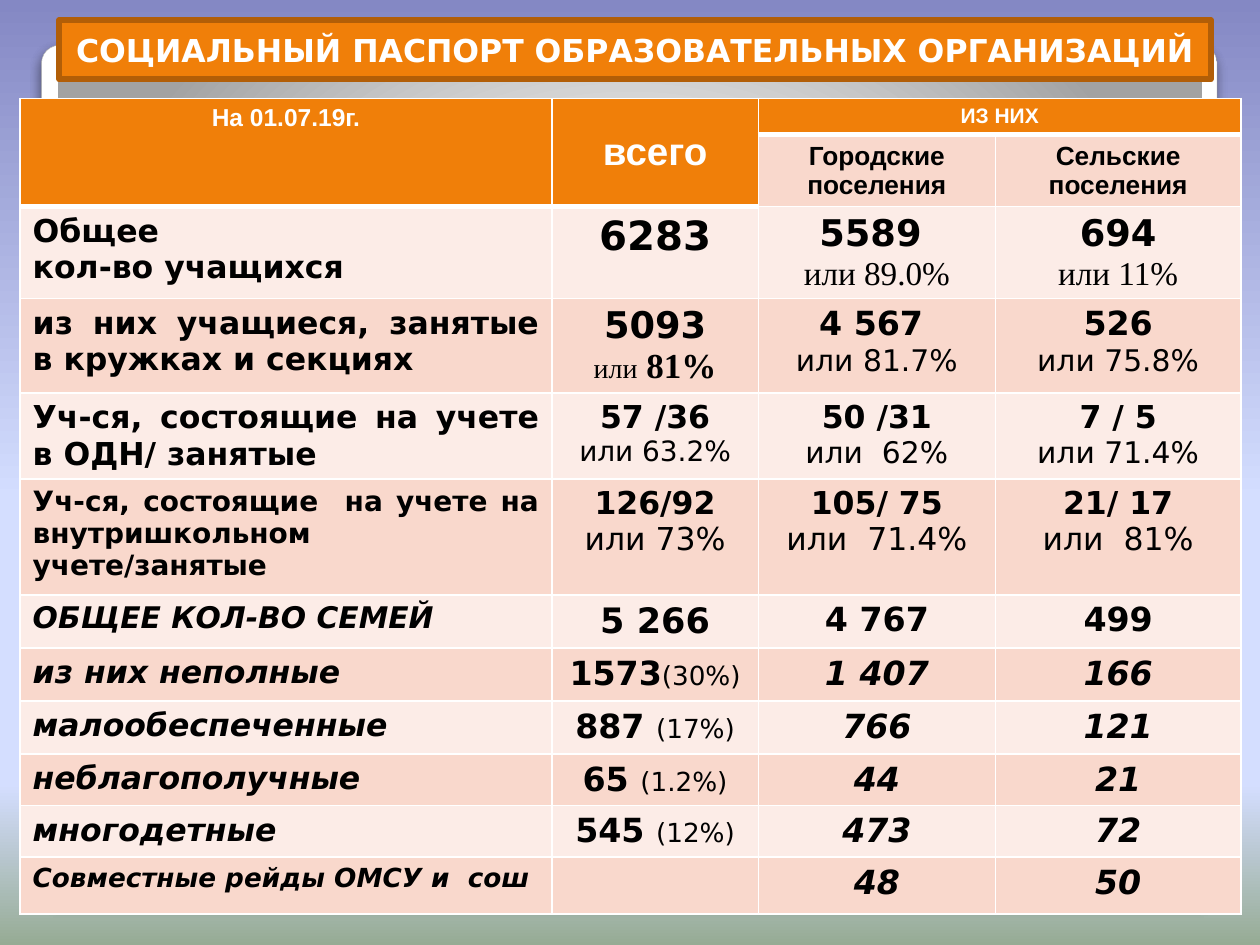
from lxml.etree import SubElement
from pptx import Presentation
from pptx.dml.color import RGBColor
from pptx.enum.shapes import MSO_SHAPE
from pptx.enum.text import MSO_ANCHOR, PP_ALIGN
from pptx.oxml import parse_xml
from pptx.oxml.ns import nsdecls, qn
from pptx.util import Inches, Pt

SANS, ARIAL, TIMES = "DejaVu Sans", "Arial", "Times New Roman"
ORANGE, BROWN, WHITE, BLACK = "F07F09", "B25E07", "FFFFFF", "000000"
PINK, PALE = "F9D8CC", "FCECE7"
LEFT, CENTER, JUSTIFY = PP_ALIGN.LEFT, PP_ALIGN.CENTER, PP_ALIGN.JUSTIFY

# Content: a run is (text, size, style, font), a paragraph is a list of runs
TITLE = "СОЦИАЛЬНЫЙ ПАСПОРТ ОБРАЗОВАТЕЛЬНЫХ ОРГАНИЗАЦИЙ"


def para(text, size, style="b", font=SANS):
    return [(text, size, style, font)]


def share(count, size, note, note_size, font=SANS):
    """A count with its percentage on the next line."""
    return [para(count, size), para(note, note_size, "", font)]


def family(label, total, percent, city, village):
    """A row about one kind of family."""
    return [[para(label, 18, "bi")],
            [para(total, 19) + para(percent, 15, "")],
            [para(city, 19, "bi")], [para(village, 19, "bi")]]


# (row, column, text, size, fill, anchor)
HEADERS = [
    (0, 0, "На 01.07.19г.", 14, ORANGE, MSO_ANCHOR.TOP),
    (0, 1, "всего", 22, ORANGE, MSO_ANCHOR.MIDDLE),
    (0, 2, "ИЗ НИХ", 12, ORANGE, MSO_ANCHOR.MIDDLE),
    (1, 2, "Городские поселения", 15, PINK, MSO_ANCHOR.MIDDLE),
    (1, 3, "Сельские поселения", 15, PINK, MSO_ANCHOR.MIDDLE),
]
MERGES = [(0, 0, 1, 0), (0, 1, 1, 1), (0, 2, 0, 3)]

# (alignment of the label, cells)
BODY = [
    (LEFT, [[para("Общее", 18), para("кол-во учащихся", 18)],
            [para("6283", 23)],
            share("5589 ", 21, "или 89.0%", 19, TIMES),
            share("694", 21, "или 11%", 19, TIMES)]),
    (JUSTIFY, [[para("из них учащиеся, занятые в кружках и секциях", 18)],
               [para("5093", 21),
                para("или", 16, "", TIMES) + para(" 81%", 20, "b", TIMES)],
               share("4 567 ", 19, "или 81.7%", 17),
               share("526", 19, "или 75.8%", 17)]),
    (JUSTIFY, [[para("Уч-ся, состоящие на учете в ОДН/ занятые", 18)],
               share("57 /36", 18, "или 63.2%", 16),
               share("50 /31", 18, "или  62%", 17),
               share("7 / 5", 18, "или 71.4%", 17)]),
    (JUSTIFY, [[para("Уч-ся, состоящие  на учете на внутришкольном "
                     "учете/занятые", 16)],
               share("126/92", 18, "или 73%", 18),
               share("105/ 75", 18, "или  71.4%", 18),
               share("21/ 17", 18, "или  81%", 18)]),
    (LEFT, [[para("ОБЩЕЕ КОЛ-ВО СЕМЕЙ", 17, "bi")], [para("5 266", 20)],
            [para("4 767", 19)], [para("499", 19)]]),
    (LEFT, family("из них неполные", "1573", "(30%)", "1 407", "166")),
    (LEFT, family("малообеспеченные", "887 ", "(17%)", "766", "121")),
    (LEFT, family("неблагополучные", "65 ", "(1.2%)", "44", "21")),
    (LEFT, family("многодетные", "545 ", "(12%)", "473", "72")),
    (LEFT, [[para("Совместные рейды ОМСУ и  сош", 15, "bi")], [],
            [para("48", 19, "bi")], [para("50", 19, "bi")]]),
]
COLS = [4.22, 1.64, 1.88, 1.95]
ROWS = [0.29, 0.57, 0.73, 0.75, 0.68, 0.92, 0.42, 0.42, 0.42, 0.41, 0.41, 0.45]

SKY = [(0, "8488C4"), (53, "D4DEFF"), (83, "D4DEFF"), (100, "96AB94")]
FRAME = [(0, WHITE), (98, WHITE), (99, "F7F7F7"), (100, "DADADA")]
PANEL = [(0, WHITE), (55, "E1E1E1"), (100, "A2A2A2")]
DOWN = '<a:lin ang="5400000" scaled="0"/>'
GLOW = ('<a:path path="circle"><a:fillToRect l="50000" t="175000" r="50000" '
        'b="-75000"/></a:path>')


def rgb(color):
    return RGBColor.from_string(color)


def set_gradient(fill, parent, stops, direction):
    fill.solid()
    gs = "".join(f'<a:gs pos="{pos * 1000}"><a:srgbClr val="{color}"/></a:gs>'
                 for pos, color in stops)
    parent.replace(parent.find(qn("a:solidFill")), parse_xml(
        f'<a:gradFill {nsdecls("a")} rotWithShape="1"><a:gsLst>{gs}</a:gsLst>'
        f'{direction}</a:gradFill>'))


def add_rounded(box, adj, stops, direction):
    sp = slide.shapes.add_shape(MSO_SHAPE.ROUNDED_RECTANGLE, *map(Inches, box))
    sp.adjustments[0] = adj
    sp.shadow.inherit = False
    set_gradient(sp.fill, sp._element.spPr, stops, direction)
    sp.line.fill.background()
    return sp


def add_run(p, text, size, style, font, color):
    r = p.add_run()
    r.text = text
    r.font.size, r.font.name = Pt(size), font
    r.font.bold, r.font.italic = "b" in style, "i" in style
    r.font.color.rgb = rgb(color)


def fill_cell(cell, paragraphs, align, color, fill):
    cell.fill.solid()
    cell.fill.fore_color.rgb = rgb(fill)
    tf = cell.text_frame
    for n, runs in enumerate(paragraphs):
        p = tf.add_paragraph() if n else tf.paragraphs[0]
        p.alignment = align
        for run in runs:
            add_run(p, *run, color)


def set_borders(cell, bottom):
    tcPr = cell._tc.get_or_add_tcPr()
    for n, side in enumerate("LRTB"):
        width = bottom if side == "B" else 1
        tcPr.insert(n, parse_xml(
            f'<a:ln{side} {nsdecls("a")} w="{Pt(width)}"><a:solidFill>'
            f'<a:srgbClr val="{WHITE}"/></a:solidFill></a:ln{side}>'))


prs = Presentation()
prs.slide_width, prs.slide_height = Inches(10), Inches(7.5)
slide = prs.slides.add_slide(prs.slide_layouts[5])

# Background
bg = slide.background.fill
bg.solid()
set_gradient(bg, slide._element.cSld.bg.bgPr, SKY, DOWN)

# Framed panels, each with a shadowed white frame
for height, adj in ((6, 0.021), (3.4, 0.046)):
    frame = add_rounded((0.33, 0.36, 9.33, 6.78), 0.021, FRAME, DOWN)
    frame.line.color.rgb = rgb("A4A4A4")
    frame.line.width = Pt(0.16)
    effects = frame._element.spPr.find(qn("a:effectLst"))
    shadow = SubElement(effects, qn("a:outerShdw"), blurRad=str(Pt(6)),
                        dist=str(Pt(4)), dir="5400000", rotWithShape="0")
    tone = SubElement(shadow, qn("a:srgbClr"), val=BLACK)
    SubElement(tone, qn("a:alpha"), val="25000")
    add_rounded((0.46, 0.47, 9.08, height), adj, PANEL, GLOW)

# Table grid
table = slide.shapes.add_table(len(ROWS), len(COLS), Inches(0.16), Inches(0.78),
                               Inches(sum(COLS)), Inches(sum(ROWS))).table
for col, width in zip(table.columns, COLS):
    col.width = Inches(width)
for row, height in zip(table.rows, ROWS):
    row.height = Inches(height)
for top, left, bottom, right in MERGES:
    table.cell(top, left).merge(table.cell(bottom, right))

# Header and body cells
for row, col, text, size, fill, anchor in HEADERS:
    cell = table.cell(row, col)
    color = WHITE if fill == ORANGE else BLACK
    fill_cell(cell, [para(text, size, "b", ARIAL)], CENTER, color, fill)
    cell.vertical_anchor = anchor
for row, (label_align, cells) in enumerate(BODY, 2):
    for col, paragraphs in enumerate(cells):
        fill_cell(table.cell(row, col), paragraphs, CENTER if col else label_align,
                  BLACK, PINK if row % 2 else PALE)
for row in range(len(ROWS)):
    for col in range(len(COLS)):
        heavy = row == 0 or (row == 1 and col < 2)
        set_borders(table.cell(row, col), 3 if heavy else 1)

# Title bar, in front of the panels
title = slide.shapes.title
title.left, title.top, title.width, title.height = map(Inches, (0.47, 0.16, 9.14, 0.47))
title.fill.solid()
title.fill.fore_color.rgb = rgb(ORANGE)
title.line.color.rgb = rgb(BROWN)
title.line.width = Pt(3.35)
tf = title.text_frame
tf.word_wrap = False
tf.vertical_anchor = MSO_ANCHOR.MIDDLE
tf.paragraphs[0].alignment = CENTER
add_run(tf.paragraphs[0], TITLE, 18, "b", SANS, WHITE)
slide.shapes._spTree.append(title._element)

prs.save("out.pptx")
